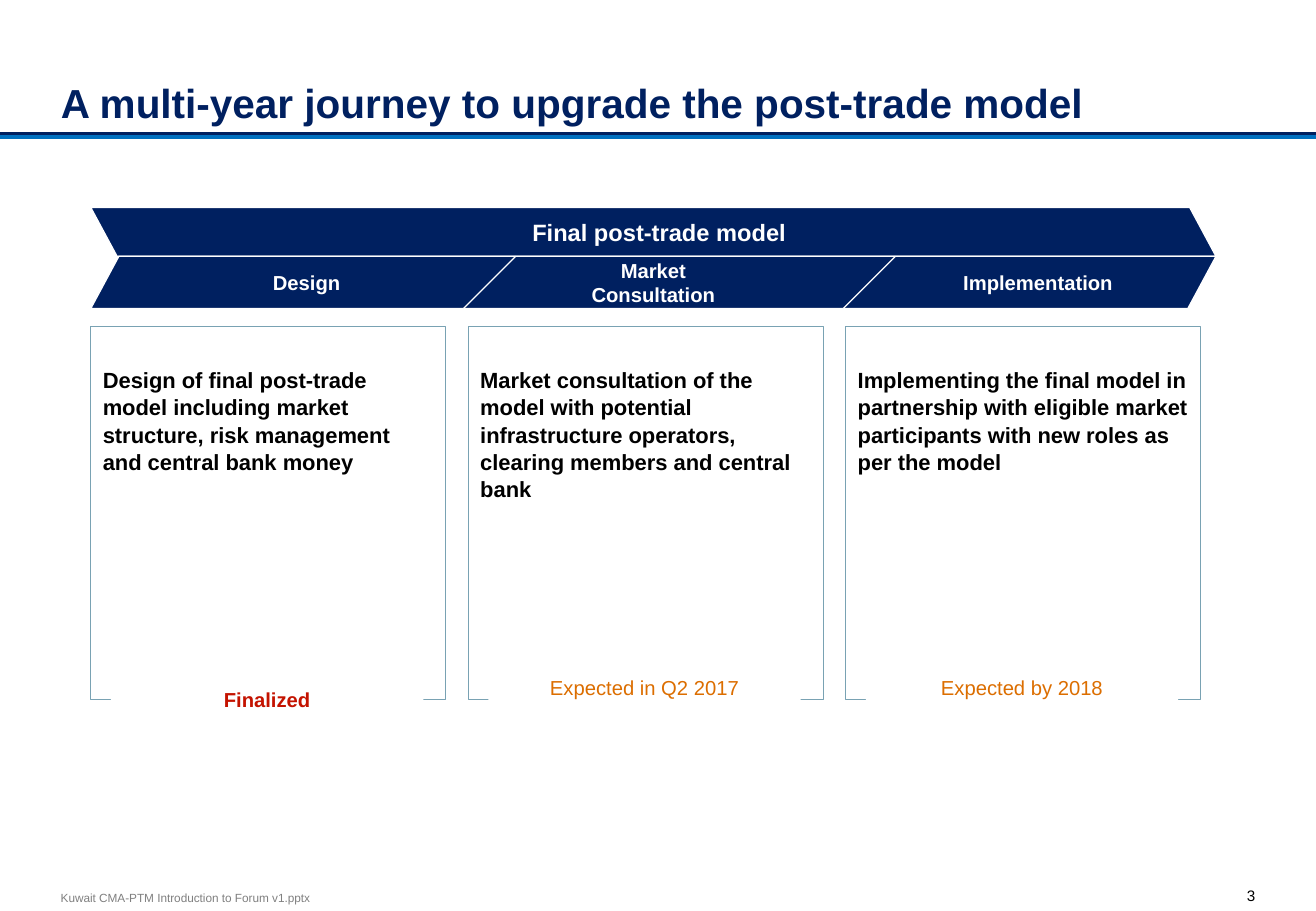
"""Build the post-trade model journey slide."""
from dataclasses import dataclass

from lxml import etree
from pptx import Presentation
from pptx.dml.color import RGBColor
from pptx.enum.shapes import MSO_CONNECTOR, MSO_SHAPE
from pptx.enum.text import MSO_ANCHOR, PP_ALIGN
from pptx.oxml.ns import qn
from pptx.util import Cm, Pt

TOP, MIDDLE, BOTTOM = MSO_ANCHOR.TOP, MSO_ANCHOR.MIDDLE, MSO_ANCHOR.BOTTOM
LEFT, CENTER, RIGHT = PP_ALIGN.LEFT, PP_ALIGN.CENTER, PP_ALIGN.RIGHT
RECT, BAND, STRAIGHT = MSO_SHAPE.RECTANGLE, MSO_SHAPE.PARALLELOGRAM, MSO_CONNECTOR.STRAIGHT


@dataclass(frozen=True)
class Theme:
    font: str = "Arial"
    navy: str = "002060"
    blue: str = "0070C0"
    white: str = "FFFFFF"
    black: str = "000000"
    grey: str = "808080"
    border: str = "79A2B3"
    red: str = "C41300"
    orange: str = "DC6E00"
    title: float = 24
    band: float = 14
    body: float = 13
    label: float = 12
    page: float = 9
    footer: float = 7
    rule: float = 2.25
    thin: float = 0.75


T = Theme()
TITLE = "A multi-year journey to upgrade the post-trade model"
BAND_TITLE = "Final post-trade model"
FOOTER = "Kuwait CMA-PTM Introduction to Forum v1.pptx"
PAGE = "3"
PHASES = [
    {"label": "Design", "center": 6.41,
     "body": "Design of final post-trade model including market structure, "
             "risk management and central bank money",
     "status": "Finalized", "color": T.red, "bold": True, "top": 14.12, "height": 1.12},
    {"label": "Market\nConsultation", "center": 13.66,
     "body": "Market consultation of the model with potential infrastructure operators, "
             "clearing members and central bank",
     "status": "Expected in Q2 2017", "color": T.orange, "bold": False, "top": 13.87, "height": 1.68},
    {"label": "Implementation", "center": 21.7,
     "body": "Implementing the final model in partnership with eligible market "
             "participants with new roles as per the model",
     "status": "Expected by 2018", "color": T.orange, "bold": False, "top": 13.87, "height": 1.68},
]

SLIDE_W, SLIDE_H = 27.51, 19.05
MARGIN = 1.27
RULE_Y, RULE_SHADOW = 2.79, 0.07
BAND_X, BAND_W = 1.9, 23.52
BAND_Y, BAND_H = 4.34, 1.02
STEP_Y, STEP_H = BAND_Y + BAND_H, 1.09
LABEL_W = 6
DIVIDER_X, DIVIDER_PITCH, DIVIDER_RUN = 9.6, 7.94, 1.18
CARD_Y, CARD_W, CARD_H, CARD_PITCH = 6.83, 7.42, 7.8, 7.89
STATUS_INSET, STATUS_W = 0.42, 6.53
PAD, CARD_PAD_TOP = 0.25, 0.81


def rgb(value):
    """Return a colour object for a hex value."""
    return RGBColor.from_string(value)


def write(sp, text, size, color, bold=False, align=LEFT, anchor=TOP, insets=(0, 0, 0, 0), spacing=None):
    """Fill a shape's text frame with uniformly formatted text."""
    tf = sp.text_frame
    tf.text = text
    tf.word_wrap = True
    tf.vertical_anchor = anchor
    tf.margin_left, tf.margin_top, tf.margin_right, tf.margin_bottom = map(Cm, insets)
    for p in tf.paragraphs:
        p.alignment = align
        if spacing:
            p.line_spacing = spacing
        p.font.name, p.font.size, p.font.bold = T.font, Pt(size), bold
        p.font.color.rgb = rgb(color)


def add_text(s, x, y, w, h, text, size, color, **style):
    """Add a text box."""
    sp = s.shapes.add_textbox(Cm(x), Cm(y), Cm(w), Cm(h))
    write(sp, text, size, color, **style)


def add_box(s, kind, x, y, w, h, fill=None, line=None):
    """Add a flat preset shape."""
    sp = s.shapes.add_shape(kind, Cm(x), Cm(y), Cm(w), Cm(h))
    sp.shadow.inherit = False
    if fill:
        sp.fill.solid()
        sp.fill.fore_color.rgb = rgb(fill)
    else:
        sp.fill.background()
    if line:
        sp.line.color.rgb = rgb(line)
        sp.line.width = Pt(T.thin)
    else:
        sp.line.fill.background()
    return sp


def add_line(s, x1, y1, x2, y2, color, width):
    """Add a flat straight line."""
    c = s.shapes.add_connector(STRAIGHT, Cm(x1), Cm(y1), Cm(x2), Cm(y2))
    c.line.color.rgb = rgb(color)
    c.line.width = Pt(width)
    etree.SubElement(c._element.spPr, qn("a:effectLst"))


def add_frame(s):
    """Add the title, the double rule, the footer and the page number."""
    title = s.shapes.title
    title.left, title.top, title.width, title.height = Cm(MARGIN), Cm(0.46), Cm(24.97), Cm(2.31)
    write(title, TITLE, T.title, T.navy, bold=True, anchor=BOTTOM, insets=(0, 0.13, 0, 0.13))
    for offset, color in ((RULE_SHADOW, T.blue), (0, T.navy)):
        add_line(s, 0, RULE_Y + offset, SLIDE_W, RULE_Y + offset, color, T.rule)
    add_text(s, MARGIN, 18.62, 8, 0.3, FOOTER, T.footer, T.grey, anchor=MIDDLE)
    add_text(s, 24.24, 18.54, 2, 0.36, PAGE, T.page, T.black, align=RIGHT)


def add_bands(s):
    """Add the two bands that form the arrow, with their dividers."""
    upper = add_box(s, BAND, BAND_X, BAND_Y, BAND_W, BAND_H, T.navy, T.white)
    lower = add_box(s, BAND, BAND_X, STEP_Y, BAND_W, STEP_H, T.navy, T.white)
    for sp in (upper, lower):
        sp.adjustments[0] = 0.538
    upper._element.spPr.find(qn("a:xfrm")).set("flipH", "1")
    write(upper, BAND_TITLE, T.band, T.white, bold=True, align=CENTER, anchor=MIDDLE,
          insets=(2 * PAD, PAD, PAD, PAD))
    for i in range(len(PHASES) - 1):
        x = DIVIDER_X + i * DIVIDER_PITCH
        add_line(s, x, STEP_Y + DIVIDER_RUN, x + DIVIDER_RUN, STEP_Y, T.white, T.thin)


def add_phase(s, i, phase):
    """Add a phase's label, card and status."""
    x = BAND_X + i * CARD_PITCH
    add_text(s, phase["center"] - LABEL_W / 2, STEP_Y, LABEL_W, STEP_H, phase["label"],
             T.label, T.white, bold=True, align=CENTER, anchor=MIDDLE)
    card = add_box(s, RECT, x, CARD_Y, CARD_W, CARD_H, line=T.border)
    write(card, phase["body"], T.body, T.black, bold=True,
          insets=(PAD, CARD_PAD_TOP, PAD, PAD), spacing=1.04)
    status = add_box(s, RECT, x + STATUS_INSET, phase["top"], STATUS_W, phase["height"], T.white)
    write(status, phase["status"], T.label, phase["color"], bold=phase["bold"],
          align=CENTER, insets=(PAD,) * 4)


def main():
    """Build and save the slide."""
    prs = Presentation()
    prs.slide_width, prs.slide_height = Cm(SLIDE_W), Cm(SLIDE_H)
    s = prs.slides.add_slide(prs.slide_layouts[5])
    add_frame(s)
    add_bands(s)
    for i, phase in enumerate(PHASES):
        add_phase(s, i, phase)
    prs.save("out.pptx")


if __name__ == "__main__":
    main()
